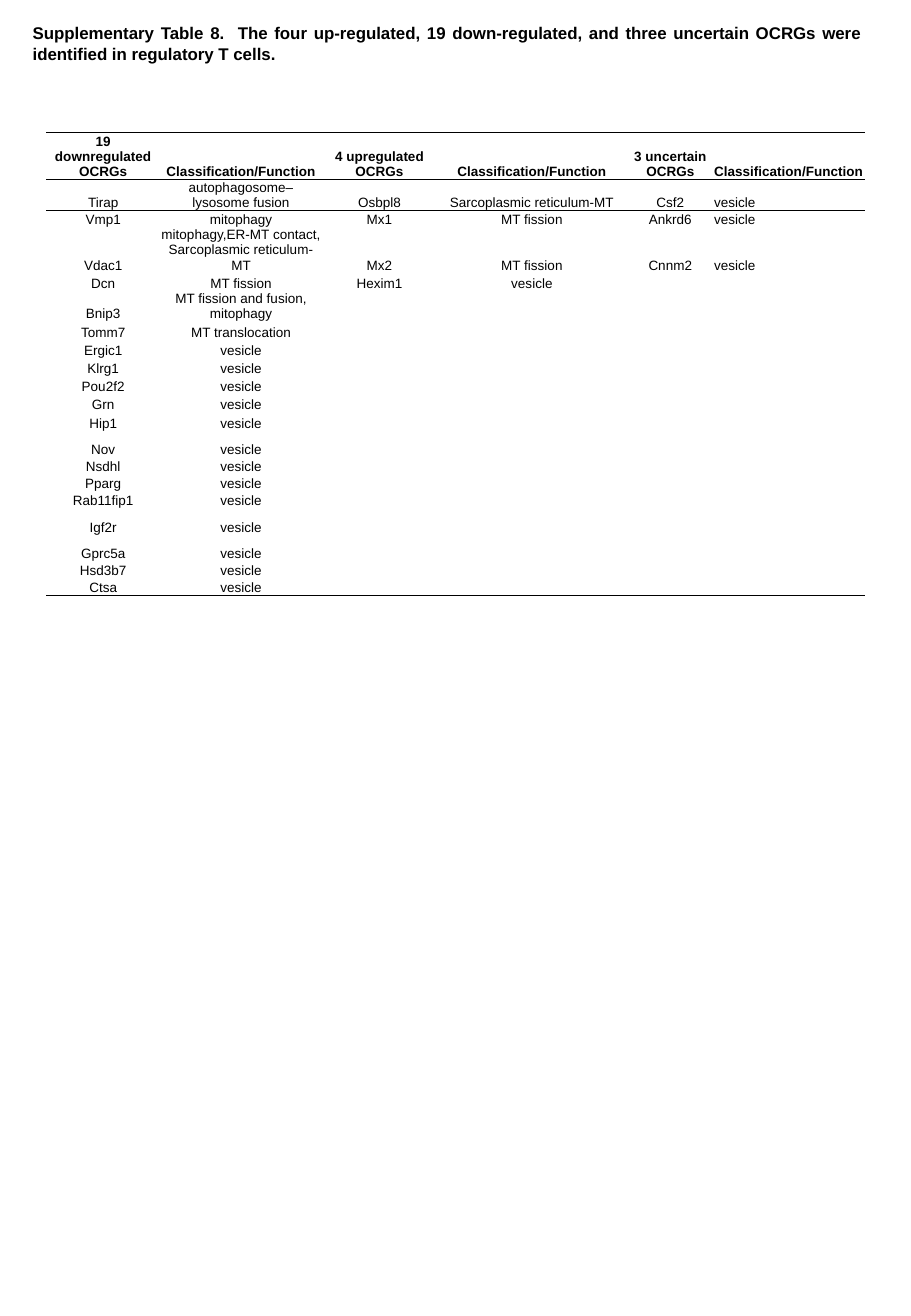
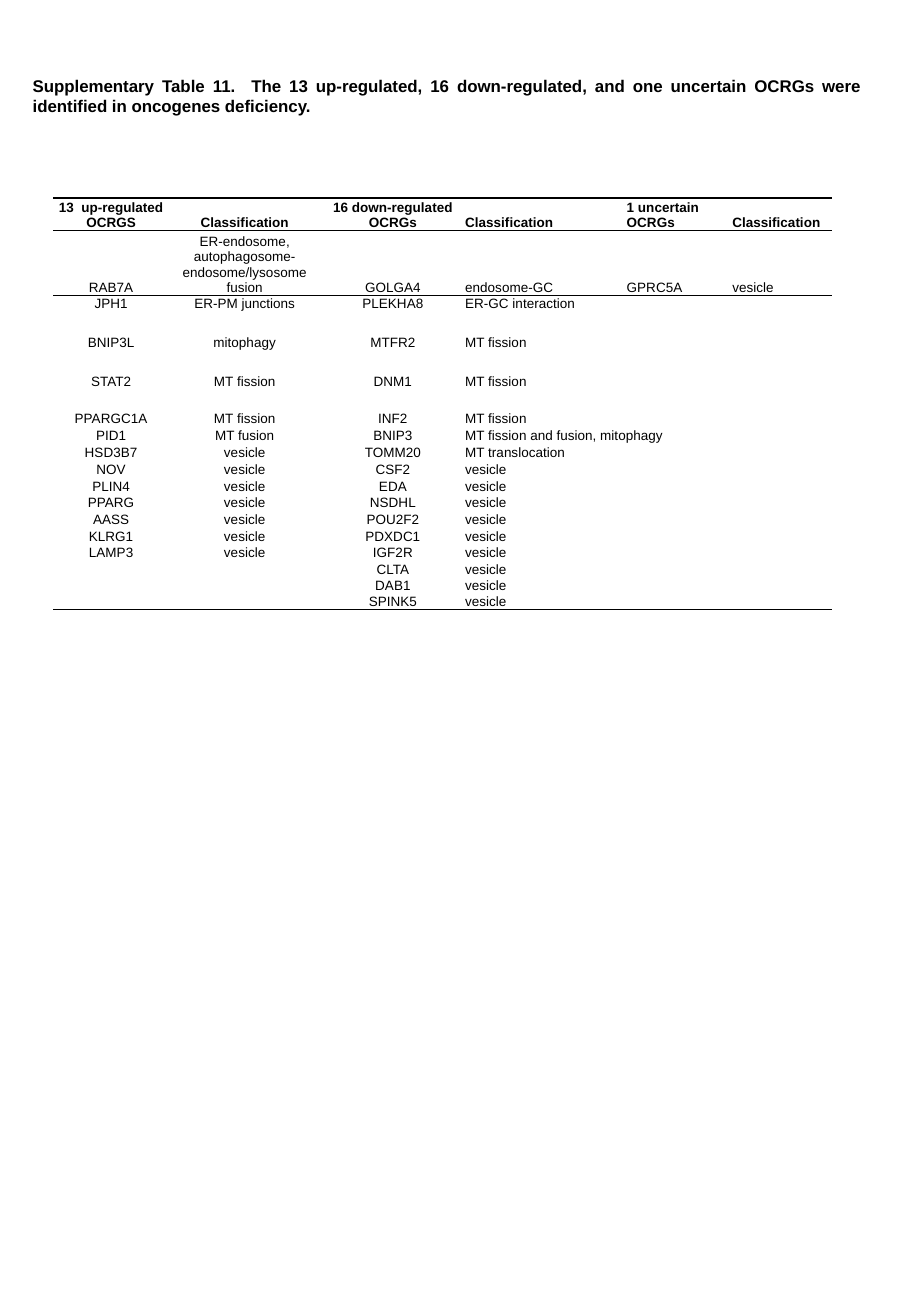
import lxml.etree
import pptx
import pptx.dml.color
import pptx.enum.text
import pptx.oxml.ns
import pptx.util

Inches = pptx.util.Inches
Pt = pptx.util.Pt
ALIGN = pptx.enum.text.PP_ALIGN
COLORS = {"ink": "000000", "page": "FFFFFF"}
FONT = "Arial"
TITLE_SIZE, CELL_SIZE = 10, 8
PLAIN_TABLE = "{2D5ABB26-0587-4C30-8999-92F81FD0307C}"

REGULATORY = {
    "title": "Supplementary Table 8.  The four up-regulated, 19 down-regulated, and three "
             "uncertain OCRGs were identified in regulatory T cells.",
    "title_top": 0.14,
    "box": (0.38, 1.09, 6.75, 3.79),
    "columns": [0.93, 1.34, 0.94, 1.57, 0.71, 0.52, 0.73],
    "heights": [0.39, 0.25, 0.14, 0.37, 0.15, 0.25] + [0.15] * 6
               + [0.22, 0.14, 0.14, 0.13, 0.22, 0.22, 0.14, 0.13],
    "fields": [0, 1, 2, 3, 4, 5],
    "centred": 5,
    "rule": 0.75,
    "spans": {(5, 6): range(12), (4, 6): (12, 16, 17), (4, 5): (13, 14, 15, 18, 19)},
    "rows": [
        "19 downregulated OCRGs|Classification/Function|4 upregulated OCRGs"
        "|Classification/Function|3 uncertain OCRGs|Classification/Function",
        "Tirap|autophagosome–lysosome fusion|Osbpl8|Sarcoplasmic reticulum-MT|Csf2|vesicle",
        "Vmp1|mitophagy|Mx1|MT fission|Ankrd6|vesicle",
        "Vdac1|mitophagy,ER-MT contact, Sarcoplasmic reticulum-MT|Mx2|MT fission|Cnnm2|vesicle",
        "Dcn|MT fission|Hexim1|vesicle",
        "Bnip3|MT fission and fusion, mitophagy",
        "Tomm7|MT translocation",
    ] + [gene + "|vesicle" for gene in (
        "Ergic1", "Klrg1", "Pou2f2", "Grn", "Hip1", "Nov", "Nsdhl", "Pparg",
        "Rab11fip1", "Igf2r", "Gprc5a", "Hsd3b7", "Ctsa")],
}

ONCOGENES = {
    "title": "Supplementary Table 11.  The 13 up-regulated, 16 down-regulated, and one "
             "uncertain OCRGs were identified in oncogenes deficiency.",
    "title_top": 0.57,
    "box": (0.44, 1.63, 6.41, 3.35),
    "columns": [0.94, 1.26, 1.18, 0.8, 0.53, 0.87, 0.83],
    "heights": [0.26, 0.52, 0.13, 0.32, 0.32, 0.31] + [0.14, 0.13, 0.14] * 3 + [0.13, 0.13],
    "fields": [0, 1, 2, 3, 5, 6],
    "centred": 3,
    "rule": 0.5,
    "spans": {(3, 4): (0, 1, 3, 4, 5), (3, 5): (2, 6, 7), (4, 5): range(8, 17)},
    "rows": [
        "13  up-regulated OCRGS|Classification|16 down-regulated OCRGs"
        "|Classification|1 uncertain OCRGs|Classification",
        "RAB7A|ER-endosome, autophagosome-endosome/lysosome fusion|GOLGA4"
        "|endosome-GC|GPRC5A|vesicle",
        "JPH1|ER-PM junctions|PLEKHA8|ER-GC interaction",
        "BNIP3L|mitophagy|MTFR2|MT fission",
        "STAT2|MT fission|DNM1|MT fission",
        "PPARGC1A|MT fission|INF2|MT fission",
        "PID1|MT fusion|BNIP3|MT fission and fusion, mitophagy",
        "HSD3B7|vesicle|TOMM20|MT translocation",
    ] + [f"{up}|vesicle|{down}|vesicle" for up, down in (
        ("NOV", "CSF2"), ("PLIN4", "EDA"), ("PPARG", "NSDHL"), ("AASS", "POU2F2"),
        ("KLRG1", "PDXDC1"), ("LAMP3", "IGF2R"))]
      + [f"||{down}|vesicle" for down in ("CLTA", "DAB1", "SPINK5")],
}


def write(para, text, size, bold, align):
    """Set a paragraph's text and format its runs."""
    para.text = text
    para.alignment = align
    for span in para.runs:
        span.font.name = FONT
        span.font.size = Pt(size)
        span.font.bold = bold
        span.font.color.rgb = pptx.dml.color.RGBColor.from_string(COLORS["ink"])


def add_title(page, text, box):
    """Place the justified bold table title in its box."""
    frame = page.shapes.add_textbox(*map(Inches, box)).text_frame
    frame.word_wrap = True
    write(frame.paragraphs[0], text, TITLE_SIZE, True, ALIGN.JUSTIFY)


def add_border(cell, side, width):
    """Draw one solid border of a cell, side being lnT or lnB."""
    qn = pptx.oxml.ns.qn
    line = lxml.etree.SubElement(cell._tc.get_or_add_tcPr(), qn("a:" + side), w=str(Pt(width)))
    fill = lxml.etree.SubElement(line, qn("a:solidFill"))
    lxml.etree.SubElement(fill, qn("a:srgbClr"), val=COLORS["ink"])


def format_cell(cell, borders):
    """Give a cell its borders, margins and anchor, with no fill."""
    for side, width in borders:
        add_border(cell, side, width)
    cell.fill.background()
    cell.margin_left = Inches(0.01)
    cell.margin_right = cell.margin_top = cell.margin_bottom = 0
    cell.vertical_anchor = pptx.enum.text.MSO_ANCHOR.BOTTOM


def add_gene_table(page, data, box):
    """Place the ruled gene table in its box."""
    heights, columns = data["heights"], data["columns"]
    last = len(heights) - 1
    graphic = page.shapes.add_table(len(heights), len(columns), *map(Inches, box))
    table = graphic.table
    table.first_row = table.horz_banding = False
    next(graphic._element.iter(pptx.oxml.ns.qn("a:tableStyleId"))).text = PLAIN_TABLE
    for column, width in zip(table.columns, columns):
        column.width = Inches(width)
    borders = {0: [("lnT", 1), ("lnB", data["rule"])],
               1: [("lnT", data["rule"])], last: [("lnB", 1)]}
    for index, height in enumerate(heights):
        table.rows[index].height = Inches(height)
        texts = dict(zip(data["fields"], data["rows"][index].split("|")))
        for column in range(len(columns)):
            cell = table.cell(index, column)
            format_cell(cell, borders.get(index, []))
            para = cell.text_frame.paragraphs[0]
            if texts.get(column):
                align = ALIGN.CENTER if column < data["centred"] else ALIGN.LEFT
                write(para, texts[column], CELL_SIZE, index == 0, align)
            else:
                para._p.get_or_add_endParaRPr().set("sz", str(CELL_SIZE * 100))
    for (first, final), rows in data["spans"].items():
        for index in rows:
            table.cell(index, first).merge(table.cell(index, final))


def add_page(deck, data):
    """Add one supplementary table slide."""
    page = deck.slides.add_slide(deck.slide_layouts[6])
    page.background.fill.solid()
    page.background.fill.fore_color.rgb = pptx.dml.color.RGBColor.from_string(COLORS["page"])
    add_gene_table(page, data, data["box"])
    add_title(page, data["title"], (0.17, data["title_top"], 7.01, 0.44))


def main():
    """Build and save the deck."""
    deck = pptx.Presentation()
    deck.slide_width, deck.slide_height = Inches(7.5), Inches(10.83)
    for data in (REGULATORY, ONCOGENES):
        add_page(deck, data)
    deck.save("out.pptx")


if __name__ == "__main__":
    main()
